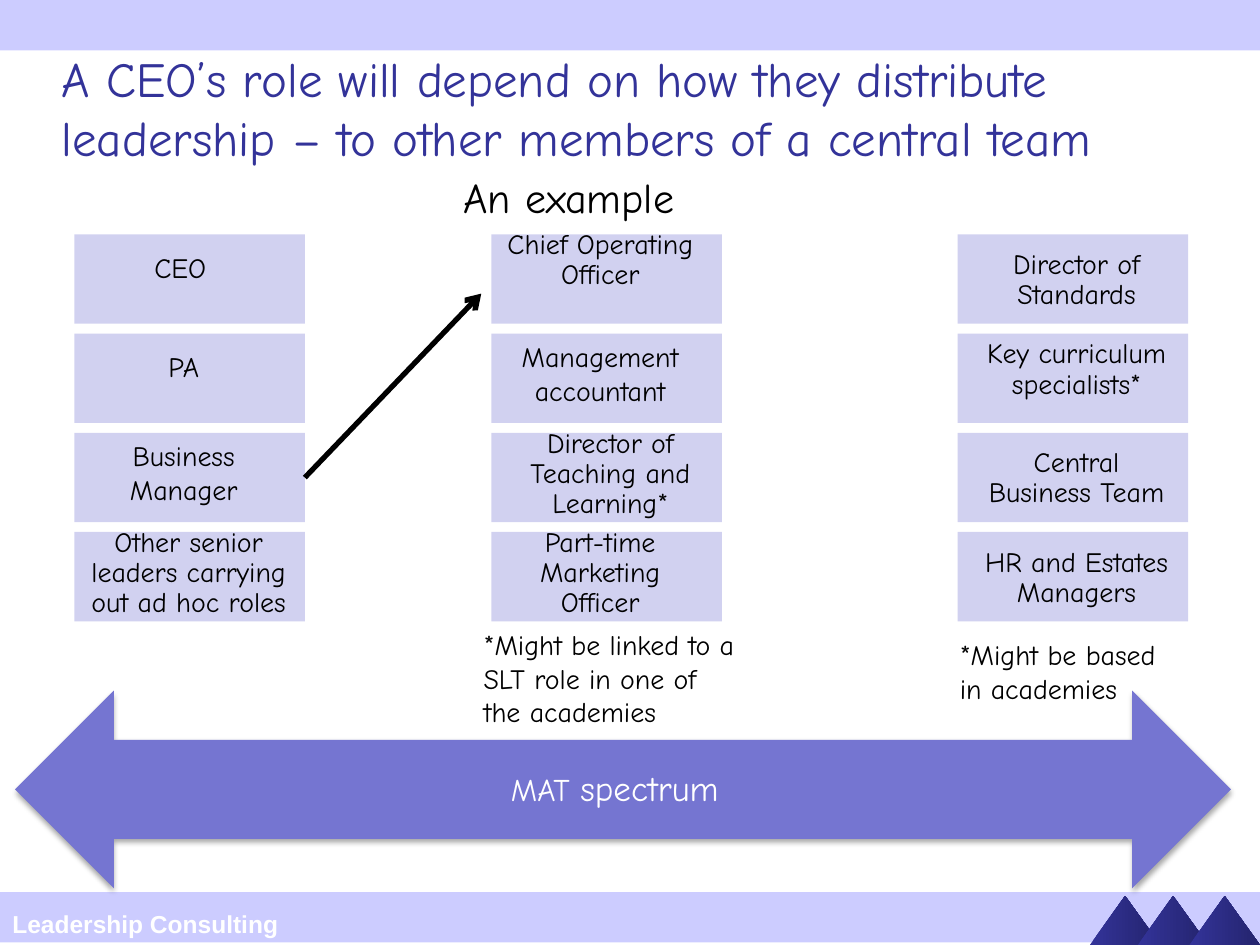
import lxml.etree
import pptx
import pptx.dml.color
import pptx.enum.shapes
import pptx.enum.text
import pptx.oxml
import pptx.oxml.ns
import pptx.util

Pt = pptx.util.Pt
KIND = pptx.enum.shapes.MSO_SHAPE
ALIGN = pptx.enum.text.PP_ALIGN
FONT = "Comic Neue"
HUES = {"band": "CCCCFF", "navy": "333399", "dark": "24246D", "cell": "D1D1F0",
        "arrow": "7575D1", "white": "FFFFFF", "black": "000000"}

CELL_W, CELL_H, STEP = 131.8, 51.1, 56.7
# Each label: text, left and top offset in its cell, width, height, line spacing
COLUMNS = [
    (42.5, [("CEO", 23, 5.7, 75, 26.6, 1),
            ("PA", 11.5, 5.7, 102, 26.6, 1),
            ("Business Manager", 11.5, 0, 102, 46, 1),
            ("Other senior leaders carrying out ad hoc roles", -5.7, -5.7, 142, 59.8, 0.9)]),
    (280.8, [("Chief Operating Officer", 0, -5.7, 124.6, 59.8, 0.9),
             ("Management accountant", 5.7, 0, 113, 46, 1),
             ("Director of Teaching and Learning*", 11.5, -5.7, 113, 59.8, 0.9),
             ("Part-time Marketing Officer", 5.7, -5.7, 113, 59.8, 0.9)]),
    (547.2, [("Director of Standards", 11.5, 5.7, 113, 42.5, 0.9),
             ("Key curriculum specialists*", 5.7, 0, 124.6, 42.5, 0.9),
             ("Central Business Team", 5.7, 5.2, 124.6, 42.5, 0.9),
             ("HR and Estates Managers", 0, 5.7, 136, 42.5, 0.9)]),
]


def tint(name):
    return pptx.dml.color.RGBColor.from_string(HUES[name])


def add_box(slide, kind, box, hue):
    shape = slide.shapes.add_shape(kind, *map(Pt, box))
    shape.shadow.inherit = False
    shape.fill.solid()
    shape.fill.fore_color.rgb = tint(hue)
    shape.line.fill.background()
    return shape


def style(para, size, hue="black", align=ALIGN.LEFT, face=FONT):
    para.alignment = align
    para.font.name = face
    para.font.size = Pt(size)
    para.font.color.rgb = tint(hue)


def add_text(slide, box, text, size, **look):
    """Add a wrapped text box and return its paragraph."""
    frame = slide.shapes.add_textbox(*map(Pt, box)).text_frame
    frame.word_wrap = True
    frame.auto_size = pptx.enum.text.MSO_AUTO_SIZE.SHAPE_TO_FIT_TEXT
    para = frame.paragraphs[0]
    para.text = text
    style(para, size, **look)
    return para


def add_bands(slide, wide, high):
    """Draw the top and bottom bands, the firm's name and the three peaks."""
    for top in (0, high - 30.2):
        add_box(slide, KIND.RECTANGLE, (0, top, wide, 28.8), "band")
    for left in (622.8, 650.2, 679.7):
        peak = add_box(slide, KIND.ISOSCELES_TRIANGLE, (left, high - 28.1, 40.3, 28.1), "navy")
        peak.fill.gradient()
        peak.fill.gradient_angle = 0
        for stop, place, hue in zip(peak.fill.gradient_stops, (0, 1), ("navy", "dark")):
            stop.position = place
            stop.color.rgb = tint(hue)
    name = add_text(slide, (0, high - 23.8, 204.5, 23.8), "Leadership Consulting", 14,
                    hue="white", face="Arial")
    name.font.bold = True


def set_title(slide, box):
    title = slide.shapes.title
    title.left, title.top, title.width, title.height = map(Pt, box)
    frame = title.text_frame
    frame.text = ("A CEO’s role will depend on how they distribute "
                  "leadership – to other members of a central team")
    frame.auto_size = pptx.enum.text.MSO_AUTO_SIZE.NONE
    frame.vertical_anchor = pptx.enum.text.MSO_ANCHOR.MIDDLE
    style(frame.paragraphs[0], 28, "navy")


def add_column(slide, left, top, labels):
    for row, (text, dx, dy, wide, high, gap) in enumerate(labels):
        y = top + row * STEP
        add_box(slide, KIND.RECTANGLE, (left, y, CELL_W, CELL_H), "cell")
        para = add_text(slide, (left + dx, y + dy, wide, high), text, 16, align=ALIGN.CENTER)
        para.line_spacing = gap


def add_link(slide, start, end):
    """Draw the arrow from one role to the role it grows into."""
    line = slide.shapes.add_connector(pptx.enum.shapes.MSO_CONNECTOR.STRAIGHT,
                                      *map(Pt, start + end))
    line.line.color.rgb = tint("black")
    line.line.width = Pt(3)
    qn = pptx.oxml.ns.qn
    head = lxml.etree.SubElement(line.line._get_or_add_ln(), qn("a:tailEnd"))
    head.set("type", "arrow")
    lxml.etree.SubElement(line._element.spPr, qn("a:effectLst"))


def add_range(slide, box):
    """Draw the wide double arrow with its soft shadow and label."""
    left, top, wide, _ = box
    arrow = add_box(slide, KIND.LEFT_RIGHT_ARROW, box, "arrow")
    effects = arrow._element.spPr.find(pptx.oxml.ns.qn("a:effectLst"))
    effects.append(pptx.oxml.parse_xml(
        f'<a:outerShdw {pptx.oxml.ns.nsdecls("a")} blurRad="{Pt(3.1)}" dist="{Pt(1.8)}" '
        f'dir="5400000" rotWithShape="0"><a:srgbClr val="{HUES["black"]}">'
        '<a:alpha val="35000"/></a:srgbClr></a:outerShdw>'))
    para = add_text(slide, (left + 56.9, top + 39.6, wide - 123, 31.7), "MAT ", 18,
                    hue="white", align=ALIGN.CENTER)
    run = para.add_run()
    run.text = "spectrum"
    run.font.size = Pt(20)


def main():
    deck = pptx.Presentation()
    deck.slide_width, deck.slide_height = Pt(720), Pt(540)
    slide = deck.slides.add_slide(deck.slide_layouts[5])
    add_bands(slide, 720, 540)
    set_title(slide, (28.1, 25.9, 694.8, 71.3))
    add_text(slide, (257.8, 94.3, 193, 36), "An example", 24)
    for left, labels in COLUMNS:
        add_column(slide, left, 133.9, labels)
    add_range(slide, (8.6, 394.6, 694.8, 113))
    add_link(slide, (174.2, 272.9), (275, 167.8))
    add_text(slide, (541.4, 360.7, 136, 46), "*Might be based in academies", 16)
    add_text(slide, (269.3, 355, 158.4, 65.5),
             "*Might be linked to a SLT role in one of the academies", 16)
    deck.save("out.pptx")


if __name__ == "__main__":
    main()
